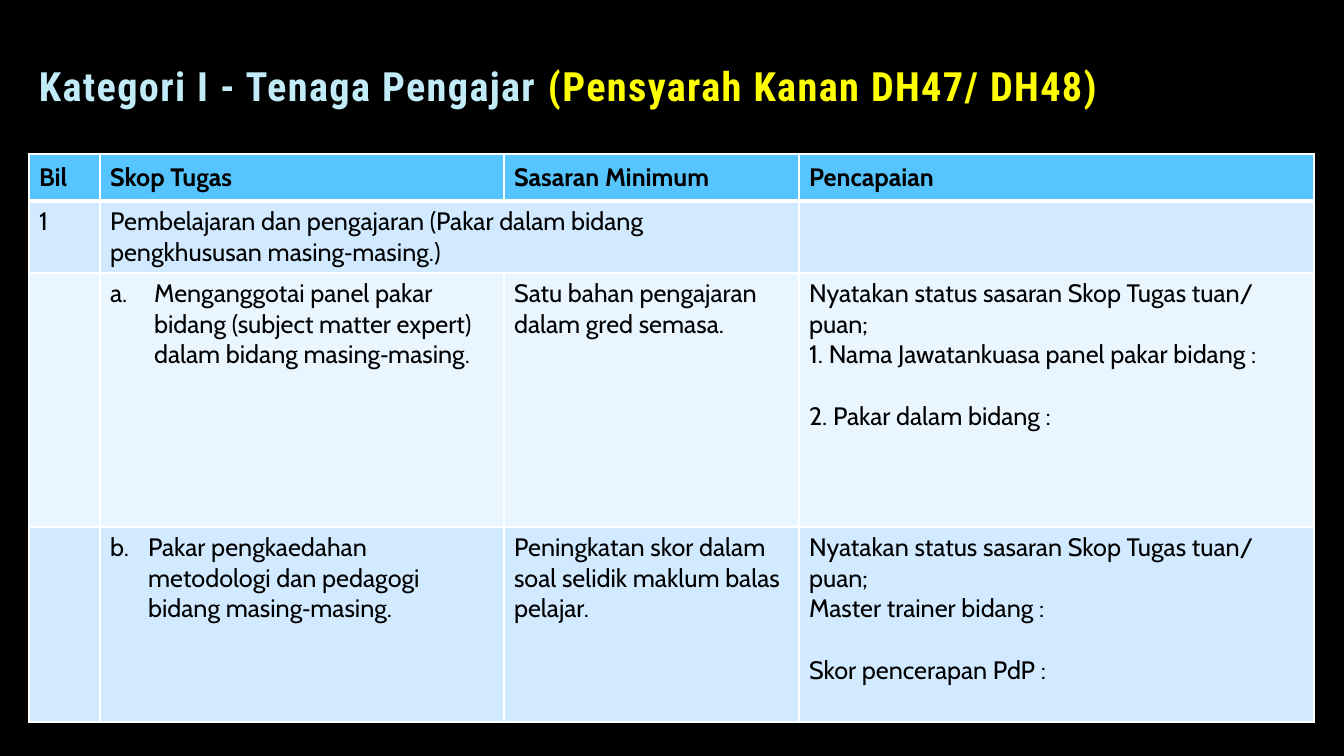
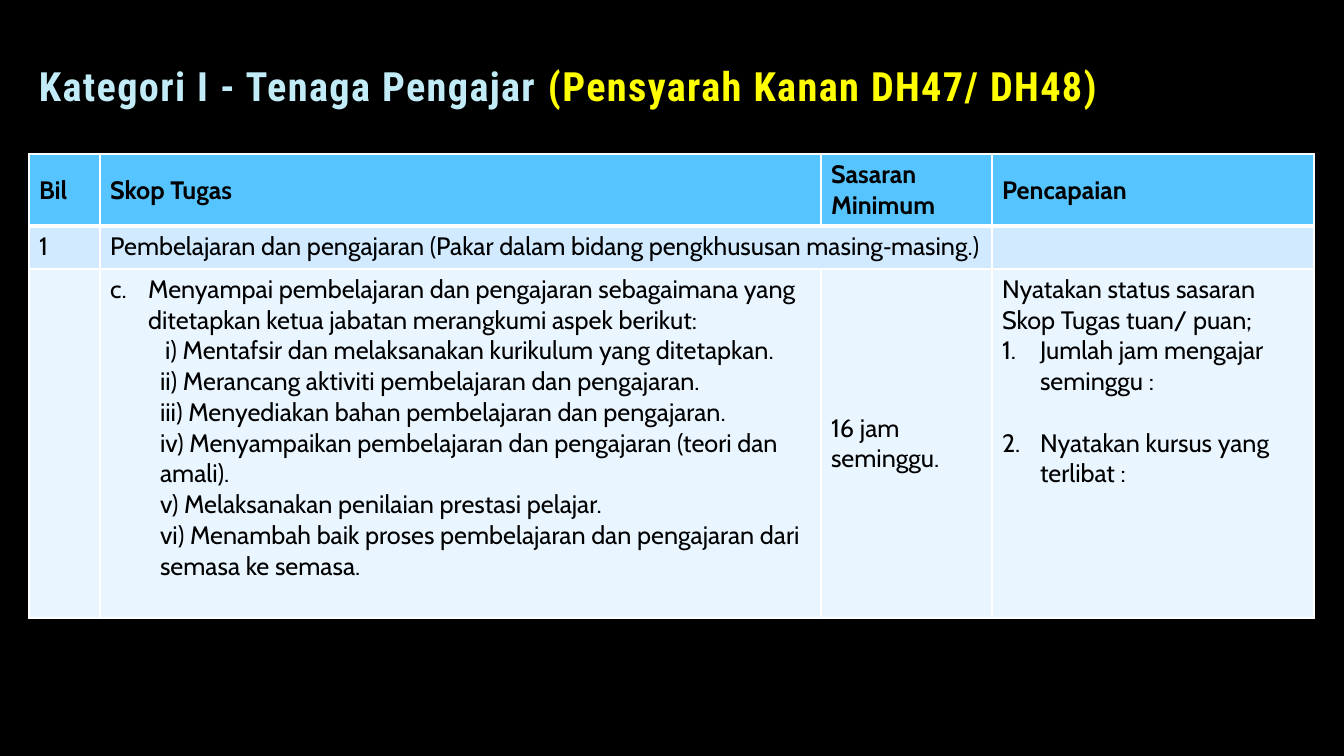
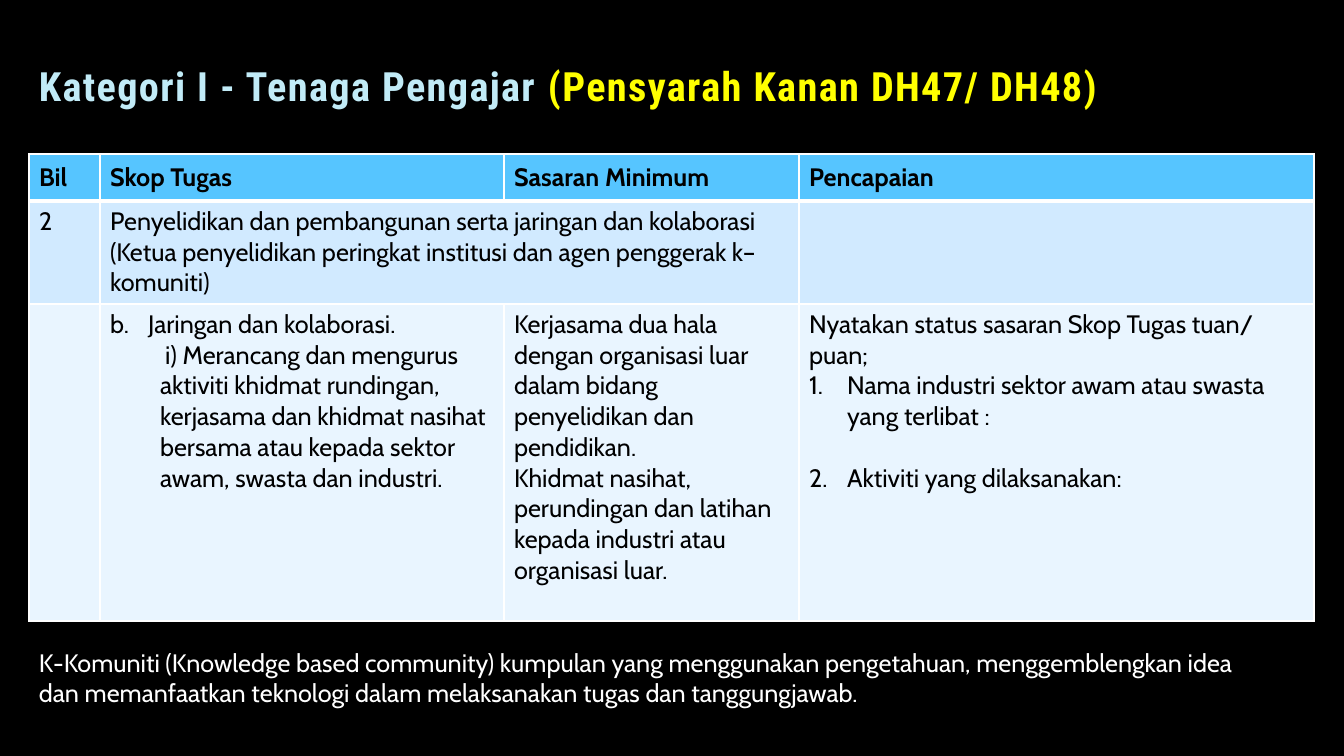
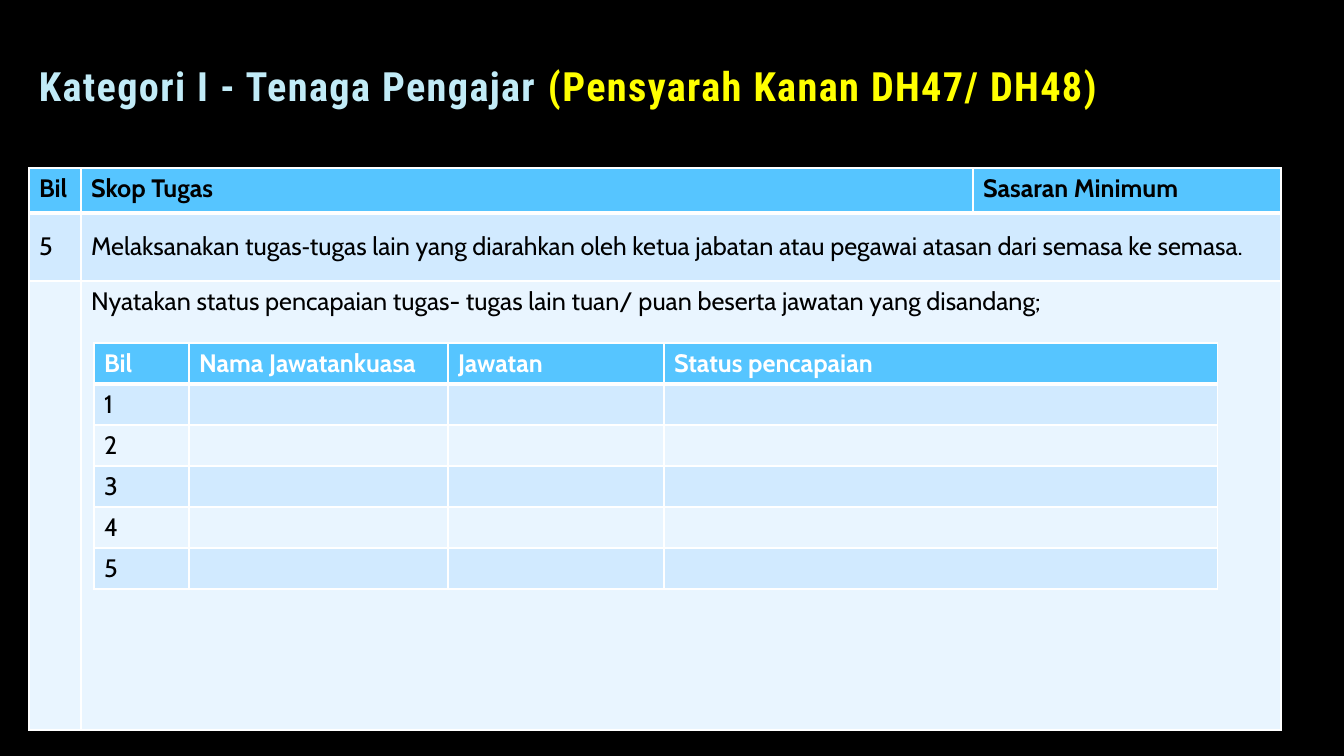
from dataclasses import dataclass

from pptx import Presentation
from pptx.dml.color import RGBColor
from pptx.enum.text import MSO_ANCHOR as Anchor
from pptx.oxml import parse_xml
from pptx.oxml.ns import nsdecls
from pptx.util import Emu, Pt

EMU_PER_PX = 12192000 / 1344

BLACK = RGBColor(0x00, 0x00, 0x00)
WHITE = RGBColor(0xFF, 0xFF, 0xFF)
ICE = RGBColor(0xC1, 0xEB, 0xF7)
YELLOW = RGBColor(0xFF, 0xFF, 0x00)
HEADER_BLUE = RGBColor(0x56, 0xC5, 0xFF)
BANDS = (RGBColor(0xE9, 0xF5, 0xFF), RGBColor(0xD1, 0xEA, 0xFF))

TITLE_FONT = dict(name="Roboto Condensed", size=Pt(28.8), bold=True)
BODY_FONT = dict(name="Cabin", size=Pt(18), bold=False)
HEADER_FONT = dict(BODY_FONT, bold=True)
LINE_GAP = Pt(22)

LETTER, NUMBER = "alphaLcPeriod", "arabicPeriod"
LEFT = 29
HEADINGS = ["Bil", "Skop Tugas", "Sasaran Minimum", "Pencapaian"]
HEADER_CELLS = {(0, column) for column in range(len(HEADINGS))}
STATUS = "Nyatakan status sasaran Skop Tugas tuan/ puan;"
TEACHING = "Pembelajaran dan pengajaran (Pakar dalam bidang pengkhususan masing‐masing.)"


def px(length):
    return Emu(round(length * EMU_PER_PX))


@dataclass
class Line:
    """One paragraph of a cell; gap leaves a line free above it."""
    text: str
    scheme: str = ""
    start: int = 1
    left: int = 0
    first: int = 0
    gap: bool = False


def listed(text, scheme, start=1, hang=38, gap=False):
    return Line(text, scheme, start, hang, -hang, gap)


def sub_item(text, first=0):
    return Line(text, left=50, first=first)


class Slides:
    def __init__(self):
        self.deck = Presentation()
        self.deck.slide_width, self.deck.slide_height = px(1344), px(756)
        self.page = None

    def new_page(self):
        self.page = self.deck.slides.add_slide(self.deck.slide_layouts[6])
        background = self.page.background.fill
        background.solid()
        background.fore_color.rgb = BLACK
        frame = self.text_frame(LEFT, 47, 1146, 68)
        frame.vertical_anchor = Anchor.BOTTOM
        para = frame.paragraphs[0]
        para.line_spacing = 0.9
        for text, color in (("Kategori I - Tenaga Pengajar ", ICE),
                            ("(Pensyarah Kanan DH47/ DH48)", YELLOW)):
            span = self.span(para, text, TITLE_FONT, color)
            span.font._element.set("spc", "100")

    def text_frame(self, left, top, width, height):
        box = self.page.shapes.add_textbox(px(left), px(top), px(width), px(height))
        box.text_frame.word_wrap = True
        return box.text_frame

    def span(self, para, text, style, color):
        span = para.add_run()
        span.text = text
        for name, value in style.items():
            setattr(span.font, name, value)
        span.font.color.rgb = color
        return span

    def note(self, text, left, top, width, height):
        frame = self.text_frame(left, top, width, height)
        self.span(frame.paragraphs[0], text, BODY_FONT, WHITE)

    def table(self, left, top, widths, heights, rows, middle=(), header_color=BLACK):
        """Draw rows of text or lists of lines; None joins a cell to its left one."""
        table = self.page.shapes.add_table(
            len(heights), len(widths), px(left), px(top),
            px(sum(widths)), px(sum(heights))).table
        table.horz_banding = False
        for column, width in zip(table.columns, widths):
            column.width = px(width)
        for row, height in zip(table.rows, heights):
            row.height = px(height)
        for r, contents in enumerate(rows):
            style, color = (BODY_FONT, BLACK) if r else (HEADER_FONT, header_color)
            for c, content in enumerate(contents):
                cell = table.cell(r, c)
                self.borders(cell, r)
                cell.fill.solid()
                cell.fill.fore_color.rgb = BANDS[r % 2] if r else HEADER_BLUE
                if content is None:
                    table.cell(r, c - 1).merge(cell)
                    continue
                if (r, c) in middle:
                    cell.vertical_anchor = Anchor.MIDDLE
                if content:
                    self.lines(cell.text_frame, content, style, color)

    def borders(self, cell, row):
        """White rules, thick between the header and the first row."""
        thick = {0: "B", 1: "T"}.get(row)
        properties = cell._tc.get_or_add_tcPr()
        for side in "LRTB":
            width = Pt(3 if side == thick else 1)
            properties.append(parse_xml(
                f'<a:ln{side} {nsdecls("a")} w="{width}"><a:solidFill>'
                f'<a:srgbClr val="{WHITE}"/></a:solidFill></a:ln{side}>'))

    def lines(self, frame, content, style, color):
        items = [content] if isinstance(content, str) else content
        for index, item in enumerate(items):
            line = Line(item) if isinstance(item, str) else item
            para = frame.add_paragraph() if index else frame.paragraphs[0]
            properties = para._p.get_or_add_pPr()
            if line.left:
                properties.set("marL", str(px(line.left)))
                properties.set("indent", str(px(line.first)))
            if line.gap:
                para.space_before = LINE_GAP
            if line.scheme:
                properties.append(parse_xml(
                    f'<a:buAutoNum {nsdecls("a")} type="{line.scheme}" '
                    f'startAt="{line.start}"/>'))
            self.span(para, line.text, style, color)


def main():
    slides = Slides()
    wide_achievement = [71, 404, 295, 515]

    slides.new_page()
    slides.table(LEFT, 154, wide_achievement, [47, 72, 254, 195], [
        HEADINGS,
        ["1", TEACHING, None, ""],
        ["",
         [listed("Menganggotai panel pakar bidang (subject matter expert) "
                 "dalam bidang masing‐masing.", LETTER, hang=44)],
         "Satu bahan pengajaran dalam gred semasa.",
         [STATUS, "1. Nama Jawatankuasa panel pakar bidang :",
          Line("2. Pakar dalam bidang :", gap=True)]],
        ["",
         [listed("Pakar pengkaedahan metodologi dan pedagogi bidang masing‐masing.",
                 LETTER, start=2)],
         "Peningkatan skor dalam soal selidik maklum balas pelajar.",
         [STATUS, "Master trainer bidang :",
          Line("Skor pencerapan PdP :", gap=True)]],
    ], HEADER_CELLS)

    slides.new_page()
    slides.table(LEFT, 154, [71, 721, 171, 322], [72, 43, 349], [
        HEADINGS,
        ["1", TEACHING, None, ""],
        ["",
         [listed("Menyampai pembelajaran dan pengajaran sebagaimana yang "
                 "ditetapkan ketua jabatan merangkumi aspek berikut:", LETTER, start=3),
          sub_item("i) Mentafsir dan melaksanakan kurikulum yang ditetapkan.", first=5),
          sub_item("ii) Merancang aktiviti pembelajaran dan pengajaran."),
          sub_item("iii) Menyediakan bahan pembelajaran dan pengajaran."),
          sub_item("iv) Menyampaikan pembelajaran dan pengajaran (teori dan amali)."),
          sub_item("v) Melaksanakan penilaian prestasi pelajar."),
          sub_item("vi) Menambah baik proses pembelajaran dan pengajaran dari "
                   "semasa ke semasa.")],
         "16 jam seminggu.",
         [STATUS, listed("Jumlah jam mengajar seminggu :", NUMBER),
          listed("Nyatakan kursus yang terlibat :", NUMBER, gap=True)]],
    ], HEADER_CELLS | {(2, 2)})

    slides.new_page()
    slides.table(LEFT, 154, wide_achievement, [47, 103, 317], [
        HEADINGS,
        ["2", "Penyelidikan dan pembangunan serta jaringan dan kolaborasi (Ketua "
              "penyelidikan peringkat institusi dan agen penggerak k– komuniti)", None, ""],
        ["",
         [listed("Jaringan dan kolaborasi.", LETTER, start=2),
          sub_item("i) Merancang dan mengurus aktiviti khidmat rundingan, kerjasama "
                   "dan khidmat nasihat bersama atau kepada sektor awam, swasta dan "
                   "industri.", first=5)],
         ["Kerjasama dua hala dengan organisasi luar dalam bidang penyelidikan dan "
          "pendidikan.",
          "Khidmat nasihat, perundingan dan latihan kepada industri atau organisasi luar."],
         [STATUS, listed("Nama industri sektor awam atau swasta yang terlibat :", NUMBER),
          listed("Aktiviti yang dilaksanakan:", NUMBER, gap=True)]],
    ], HEADER_CELLS)
    slides.note("K-Komuniti (Knowledge based community) kumpulan yang menggunakan "
                "pengetahuan, menggemblengkan idea dan memanfaatkan teknologi dalam "
                "melaksanakan tugas dan tanggungjawab.", LEFT, 642, 1252, 72)

    slides.new_page()
    slides.table(LEFT, 168, [52, 892, 308], [45, 68, 449], [
        HEADINGS[:3],
        ["5", "Melaksanakan tugas‐tugas lain yang diarahkan oleh ketua jabatan atau "
              "pegawai atasan dari semasa ke semasa.", None],
        ["", "Nyatakan status pencapaian tugas- tugas lain tuan/ puan beserta jawatan "
             "yang disandang;", None],
    ], {(1, 0), (1, 1)})
    committees = [[str(number), "", "", ""] for number in range(1, 6)]
    slides.table(94, 343, [95, 259, 216, 554], [41] * 6, [
        ["Bil", "Nama Jawatankuasa", "Jawatan", "Status pencapaian"], *committees,
    ], header_color=WHITE)

    slides.deck.save("out.pptx")


if __name__ == "__main__":
    main()
